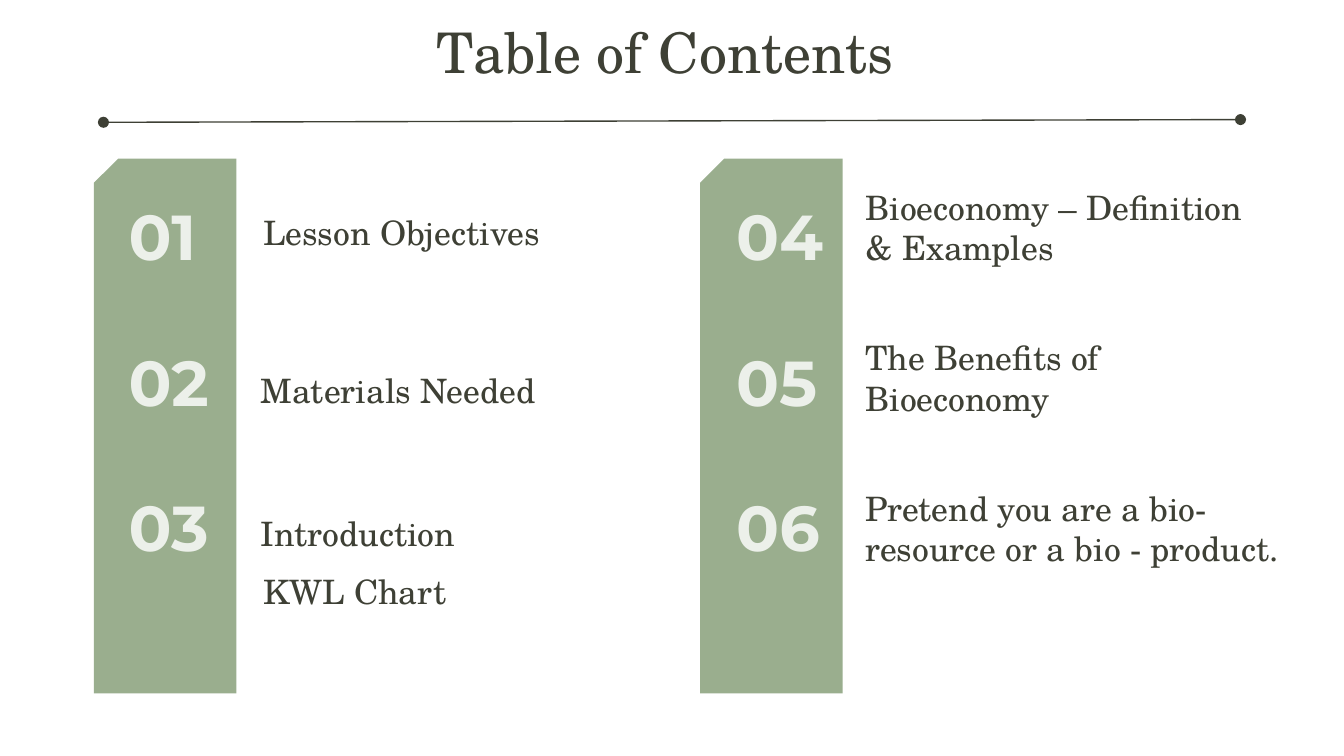
"""Build a table of contents slide with two numbered columns."""
from lxml.etree import SubElement
from pptx import Presentation
from pptx.dml.color import RGBColor
from pptx.enum.shapes import MSO_CONNECTOR as Connector, MSO_SHAPE as Shape
from pptx.enum.text import MSO_ANCHOR as Anchor, PP_ALIGN as Align
from pptx.oxml.ns import qn
from pptx.util import Inches, Pt

DARK = RGBColor(0x3E, 0x40, 0x35)
SAGE = RGBColor(0x9A, 0xAE, 0x8E)
PALE = RGBColor(0xEC, 0xF0, 0xEA)
SERIF = "TeX Gyre Schola"
SANS = "Montserrat"

deck = Presentation()
deck.slide_width = Inches(10)
deck.slide_height = Inches(10 * 9 / 16)
page = deck.slides.add_slide(deck.slide_layouts[6])


def add_text(text, left, top, width, height, size, font=SERIF, color=DARK,
             bold=False, anchor=Anchor.BOTTOM, align=Align.LEFT):
    box = page.shapes.add_textbox(Inches(left), Inches(top), Inches(width), Inches(height))
    frame = box.text_frame
    frame.word_wrap = True
    frame.vertical_anchor = anchor
    frame.margin_left = frame.margin_right = Inches(0.1)
    frame.margin_top = frame.margin_bottom = Inches(0.1)
    para = frame.paragraphs[0]
    para.text = text
    para.alignment = align
    para.font.name = font
    para.font.size = Pt(size)
    para.font.bold = bold
    para.font.color.rgb = color


add_text("Table of Contents", 0.55, 0.03, 8.8, 1, 30, anchor=Anchor.TOP, align=Align.CENTER)

for left in (0.7, 5.21):
    band = page.shapes.add_shape(Shape.SNIP_1_RECTANGLE, Inches(left), Inches(1.18),
                                 Inches(1.06), Inches(3.98))
    band.adjustments[0] = 0.17
    band.shadow.inherit = False
    band.fill.solid()
    band.fill.fore_color.rgb = SAGE
    band.line.fill.background()
    band._element.spPr.find(qn("a:xfrm")).set("flipH", "1")

for column, left in enumerate((0.86, 5.38)):
    for row, top in enumerate((1.41, 2.5, 3.58)):
        add_text(f"{3 * column + row + 1:02}", left, top, 0.9, 0.72, 34, SANS, PALE, bold=True)

topics = [
    ("Lesson Objectives", 1.86, 1.34, 3.01),
    ("Materials Needed", 1.84, 2.51, 3.01),
    ("Introduction", 1.84, 3.58, 3.01),
    ("KWL Chart", 1.86, 4.01, 3.01),
    ("Bioeconomy – Definition & Examples", 6.34, 1.45, 3.01),
    ("The Benefits of Bioeconomy", 6.34, 2.57, 3.01),
    ("Pretend you are a bio-resource or a bio - product.", 6.34, 3.69, 3.5),
]
for topic, left, top, width in topics:
    add_text(topic, left, top, width, 0.64, 18)

rule = page.shapes.add_connector(Connector.STRAIGHT, Inches(0.77), Inches(0.91),
                                 Inches(9.23), Inches(0.89))
rule.line.color.rgb = DARK
rule.line.width = Pt(0.75)
for end in ("a:headEnd", "a:tailEnd"):
    SubElement(rule.line._get_or_add_ln(), qn(end), type="oval")
SubElement(rule._element.spPr, qn("a:effectLst"))

deck.save("out.pptx")
